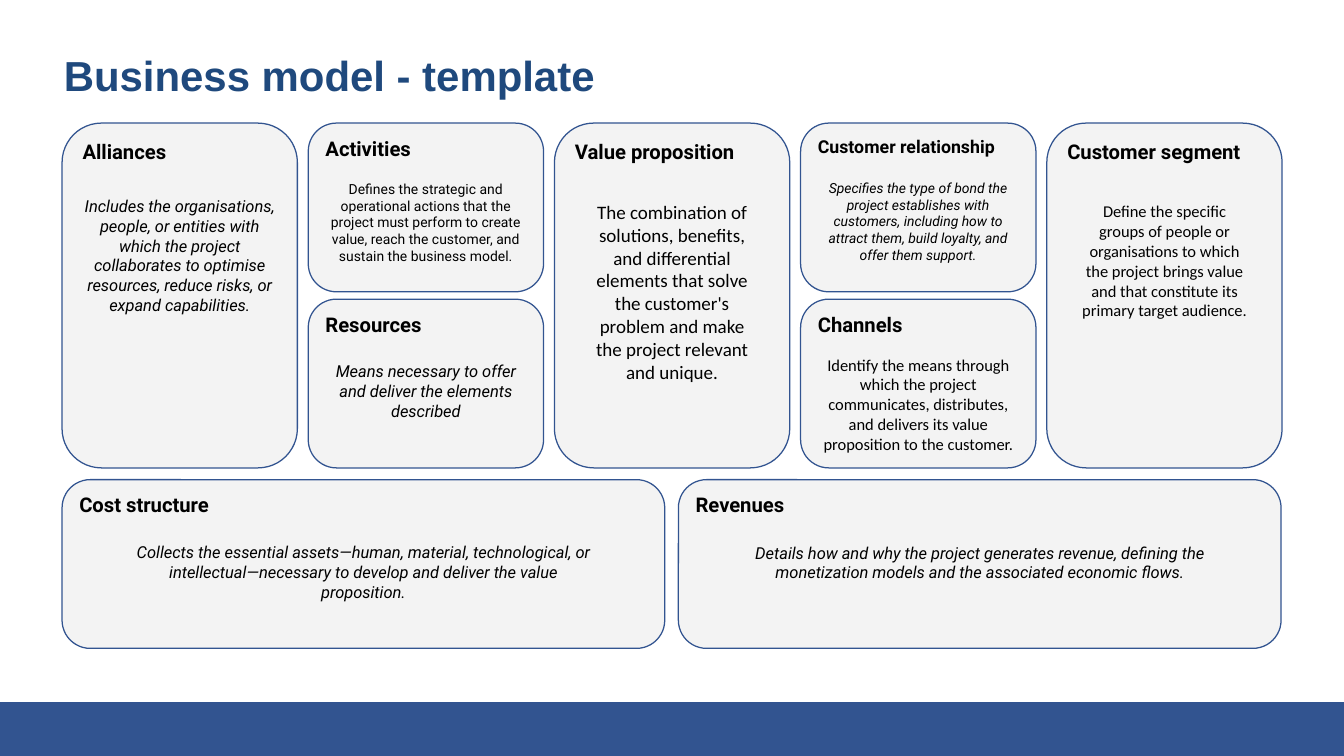
from dataclasses import dataclass

from pptx import Presentation
from pptx.dml.color import RGBColor
from pptx.enum.shapes import MSO_SHAPE as Shape
from pptx.enum.text import MSO_ANCHOR as Anchor, PP_ALIGN as Align
from pptx.util import Pt

PAGE_WIDTH, PAGE_HEIGHT = 1061.28, 596.88
NAVY = RGBColor(0x32, 0x54, 0x90)
TITLE_BLUE = RGBColor(0x1F, 0x49, 0x7D)
PANEL = RGBColor(0xF3, 0xF3, 0xF3)
BLACK = RGBColor(0, 0, 0)

# Canvas grid
LEFT, COLUMN_STEP, HALF_STEP = 49, 194.4, 486.7
COLUMN_WIDTH, HALF_WIDTH = 185.8, 475.9
TOP, MIDDLE, BOTTOM = 97.2, 236.2, 378.7
SHORT, TALL = 133.2, 272.2
COLUMNS = [LEFT + COLUMN_STEP * index for index in range(5)]
HALVES = [LEFT + HALF_STEP * index for index in range(2)]


@dataclass
class Body:
    """Description centred across its card, at a drop below the card's top."""
    text: str
    drop: float
    width: float
    height: float
    size: float = 13
    name: str = "Roboto"
    italic: bool = False


@dataclass
class Card:
    heading: str
    left: float
    top: float
    height: float
    body: Body
    width: float = COLUMN_WIDTH
    size: float = 16


CARDS = [
    Card("Alliances", COLUMNS[0], TOP, TALL, Body(
        "Includes the organisations, people, or entities with which the project "
        "collaborates to optimise resources, reduce risks, or expand capabilities.",
        54, 175.7, 158.4, italic=True)),
    Card("Activities", COLUMNS[1], TOP, SHORT, Body(
        "Defines the strategic and operational actions that the project must perform "
        "to create value, reach the customer, and sustain the business model.",
        41.8, 175.7, 78.5, size=11)),
    Card("Resources", COLUMNS[1], MIDDLE, SHORT, Body(
        "Means necessary to offer and deliver the elements described",
        45.3, 175.7, 78.5, italic=True)),
    Card("Value proposition", COLUMNS[2], TOP, TALL, Body(
        "The combination of solutions, benefits, and differential elements that solve "
        "the customer's problem and make the project relevant and unique.",
        57.6, 149.8, 164.9, size=15, name="Calibri")),
    Card("Customer relationship", COLUMNS[3], TOP, SHORT, Body(
        "Specifies the type of bond the project establishes with customers, including "
        "how to attract them, build loyalty, and offer them support.",
        41, 167.8, 78.5, size=11, italic=True), size=14),
    Card("Channels", COLUMNS[3], MIDDLE, SHORT, Body(
        "Identify the means through which the project communicates, distributes, and "
        "delivers its value proposition to the customer.",
        40.3, 167.8, 78.5, name="Calibri")),
    Card("Customer segment", COLUMNS[4], TOP, TALL, Body(
        "Define the specific groups of people or organisations to which the project "
        "brings value and that constitute its primary target audience.",
        58.3, 149.8, 97.2, name="Calibri")),
    Card("Cost structure", HALVES[0], BOTTOM, SHORT, Body(
        "Collects the essential assets—human, material, technological, or "
        "intellectual—necessary to develop and deliver the value proposition.",
        46.1, 388.8, 54.7, italic=True), width=HALF_WIDTH),
    Card("Revenues", HALVES[1], BOTTOM, SHORT, Body(
        "Details how and why the project generates revenue, defining the monetization "
        "models and the associated economic flows.",
        46.1, 388.8, 78.5, italic=True), width=HALF_WIDTH),
]


def add_panel(page, kind, left: float, top: float, width: float, height: float,
              fill: RGBColor):
    panel = page.shapes.add_shape(kind, Pt(left), Pt(top), Pt(width), Pt(height))
    panel.shadow.inherit = False
    panel.fill.solid()
    panel.fill.fore_color.rgb = fill
    panel.line.fill.background()
    return panel


def write(box, text: str, font: dict, color: RGBColor = BLACK,
          align=Align.LEFT, inset: tuple = (7.2, 3.6)):
    frame = box.text_frame
    across, down = inset
    frame_format = {
        "word_wrap": True, "vertical_anchor": Anchor.TOP,
        "margin_left": Pt(across), "margin_right": Pt(across),
        "margin_top": Pt(down), "margin_bottom": Pt(down),
    }
    for key, value in frame_format.items():
        setattr(frame, key, value)
    para = frame.paragraphs[0]
    para.alignment = align
    span = para.add_run()
    span.text = text
    for key, value in font.items():
        setattr(span.font, key, value)
    span.font.color.rgb = color
    return para


def draw_card(page, card: Card) -> None:
    panel = add_panel(page, Shape.ROUNDED_RECTANGLE, card.left, card.top,
                      card.width, card.height, PANEL)
    panel.adjustments[0] = 0.167
    panel.line.color.rgb = NAVY
    panel.line.width = Pt(1)
    write(panel, card.heading, {"name": "Roboto", "size": Pt(card.size), "bold": True})


def draw_body(page, card: Card) -> None:
    body = card.body
    left = card.left + (card.width - body.width) / 2
    box = add_panel(page, Shape.RECTANGLE, left, card.top + body.drop,
                    body.width, body.height, PANEL)
    font = {"name": body.name, "size": Pt(body.size), "italic": body.italic}
    write(box, body.text, font, align=Align.CENTER)


def main() -> None:
    deck = Presentation()
    deck.slide_width, deck.slide_height = Pt(PAGE_WIDTH), Pt(PAGE_HEIGHT)
    page = deck.slides.add_slide(deck.slide_layouts[6])

    # Footer band
    add_panel(page, Shape.RECTANGLE, 0, 554.4, PAGE_WIDTH, PAGE_HEIGHT - 554.4, NAVY)

    # Business model canvas
    for card in CARDS:
        draw_card(page, card)
        draw_body(page, card)

    # Title
    title = page.shapes.add_textbox(Pt(50.4), Pt(46.8), Pt(815.8), Pt(31))
    para = write(title, "Business model - template",
                 {"name": "Arial", "size": Pt(33.1), "bold": True},
                 TITLE_BLUE, inset=(0, 0))
    para.line_spacing = 0.8

    deck.save("out.pptx")


if __name__ == "__main__":
    main()
